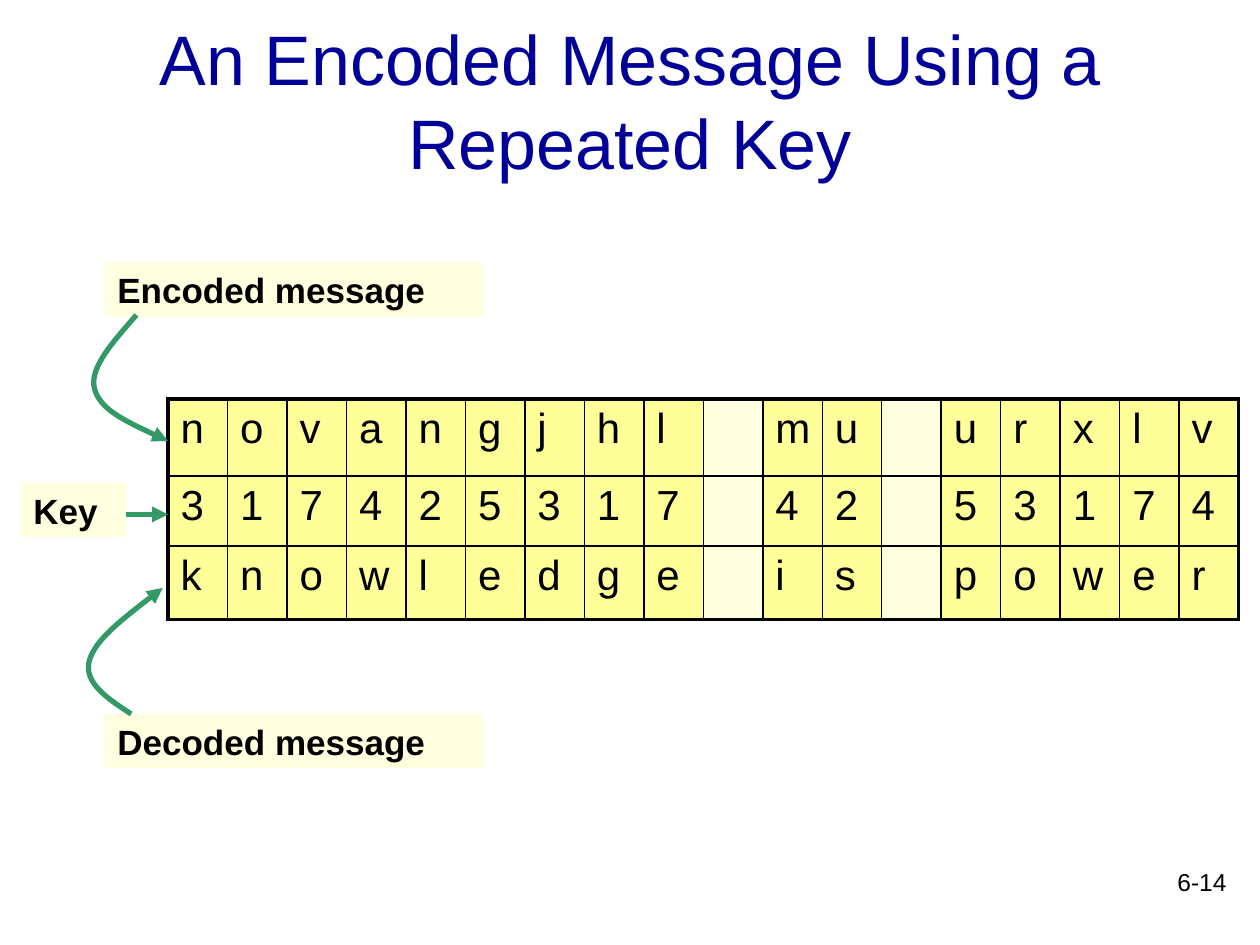
from dataclasses import dataclass

from lxml import etree
from pptx import Presentation
from pptx.dml.color import RGBColor
from pptx.enum import shapes, text
from pptx.oxml import ns
from pptx.util import Pt


@dataclass(frozen=True)
class Theme:
    font: str = "Arial"
    ink: str = "000000"
    title: str = "000099"
    letter: str = "FFFF99"
    pale: str = "FFFFDF"
    arrow: str = "339966"
    title_size: float = 40
    cell_size: float = 24
    label_size: float = 20
    number_size: float = 14
    arrow_width: float = 3
    outer_border: float = 2.25
    inner_border: float = 1


THEME = Theme()

# A space marks the gap between two words.
MESSAGE_ROWS = ["novangjhl mu urxlv", "317425317 42 53174", "knowledge is power"]
ROW_HEIGHTS = [44, 40, 42]

LABELS = [
    ("Encoded message", (60, 150, 216, 31)),
    ("Key", (12, 276, 60, 31)),
    ("Decoded message", (60, 408, 216, 31)),
]

# Each curve: its box, then a start point and two Bezier segments inside it.
CURVES = [
    ((51, 180, 45, 72),
     [(27, 0), (14, 15), (0, 30), (3, 42), (6, 54), (25.5, 63), (45, 72)]),
    ((48, 336, 45, 72),
     [(27, 72), (13, 63), (0, 54), (3, 42), (6, 30), (25.5, 15), (45, 0)]),
]


def rgb(color):
    return RGBColor.from_string(color)


def points(box):
    return [Pt(length) for length in box]


def write(frame, words, size, color=THEME.ink, bold=False,
          align=text.PP_ALIGN.LEFT, anchor=text.MSO_ANCHOR.TOP):
    frame.word_wrap = True
    frame.vertical_anchor = anchor
    paragraph = frame.paragraphs[0]
    paragraph.alignment = align
    run = paragraph.add_run()
    run.text = words
    run.font.name = THEME.font
    run.font.size = Pt(size)
    run.font.bold = bold
    run.font.color.rgb = rgb(color)


def add_title(slide, box):
    frame = slide.shapes.add_textbox(*points(box)).text_frame
    write(frame, "An Encoded Message Using a Repeated Key", THEME.title_size,
          THEME.title, align=text.PP_ALIGN.CENTER, anchor=text.MSO_ANCHOR.MIDDLE)


def add_slide_number(slide, box):
    frame = slide.shapes.add_textbox(*points(box)).text_frame
    write(frame, "6-14", THEME.number_size, align=text.PP_ALIGN.RIGHT)


def set_borders(cell, widths):
    """Draw the left, right, top and bottom borders, in that order."""
    properties = cell._tc.get_or_add_tcPr()
    for index, (side, width) in enumerate(zip("LRTB", widths)):
        line = etree.Element(ns.qn(f"a:ln{side}"), w=str(Pt(width)))
        fill = etree.SubElement(line, ns.qn("a:solidFill"))
        etree.SubElement(fill, ns.qn("a:srgbClr"), val=THEME.ink)
        properties.insert(index, line)


def add_message_table(slide, box):
    row_count, column_count = len(MESSAGE_ROWS), len(MESSAGE_ROWS[0])
    table = slide.shapes.add_table(row_count, column_count, *points(box)).table
    table.first_row = table.horz_banding = False
    for column in table.columns:
        column.width = Pt(box[2] / column_count)
    for r, (letters, height) in enumerate(zip(MESSAGE_ROWS, ROW_HEIGHTS)):
        table.rows[r].height = Pt(height)
        for c, letter in enumerate(letters):
            cell = table.cell(r, c)
            is_gap = letter == " "
            cell.fill.solid()
            cell.fill.fore_color.rgb = rgb(THEME.pale if is_gap else THEME.letter)
            if not is_gap:
                write(cell.text_frame, letter, THEME.cell_size)
            on_edge = (c == 0, c == column_count - 1, r == 0, r == row_count - 1)
            set_borders(cell, [THEME.outer_border if edge else THEME.inner_border
                               for edge in on_edge])


def add_label(slide, words, box):
    label = slide.shapes.add_shape(shapes.MSO_SHAPE.RECTANGLE, *points(box))
    label.shadow.inherit = False
    label.fill.solid()
    label.fill.fore_color.rgb = rgb(THEME.pale)
    label.line.fill.background()
    write(label.text_frame, words, THEME.label_size, bold=True,
          anchor=text.MSO_ANCHOR.MIDDLE)


def style_arrow(shape):
    shape.line.color.rgb = rgb(THEME.arrow)
    shape.line.width = Pt(THEME.arrow_width)
    line = shape.line._get_or_add_ln()
    etree.SubElement(line, ns.qn("a:tailEnd"), type="triangle")


def add_key_arrow(slide, box):
    left, top, width, height = box
    arrow = slide.shapes.add_connector(
        shapes.MSO_CONNECTOR.STRAIGHT,
        *points((left, top, left + width, top + height)))
    style_arrow(arrow)
    etree.SubElement(arrow._element.spPr, ns.qn("a:effectLst"))


def add_curved_arrow(slide, box, offsets):
    """Outline the control points, then join each three into a Bezier segment."""
    start, *rest = [points((box[0] + x, box[1] + y)) for x, y in offsets]
    builder = slide.shapes.build_freeform(*start)
    builder.add_line_segments(rest, close=False)
    curve = builder.convert_to_shape()
    curve.shadow.inherit = False
    curve.fill.background()
    style_arrow(curve)
    outline = curve._element.find(".//" + ns.qn("a:path"))
    segments = outline.findall(ns.qn("a:lnTo"))
    for first in range(0, len(segments), 3):
        bezier = etree.SubElement(outline, ns.qn("a:cubicBezTo"))
        for segment in segments[first:first + 3]:
            bezier.append(segment[0])
            outline.remove(segment)


def main():
    presentation = Presentation()
    presentation.slide_width, presentation.slide_height = Pt(720), Pt(540)
    slide = presentation.slides.add_slide(presentation.slide_layouts[6])
    add_slide_number(slide, (558, 492, 150, 36))
    add_title(slide, (54, 12, 612, 90))
    add_message_table(slide, (96, 228, 612, sum(ROW_HEIGHTS)))
    for words, box in LABELS:
        add_label(slide, words, box)
    add_key_arrow(slide, (72, 294, 24, 0))
    for box, offsets in CURVES:
        add_curved_arrow(slide, box, offsets)
    presentation.save("out.pptx")


if __name__ == "__main__":
    main()
